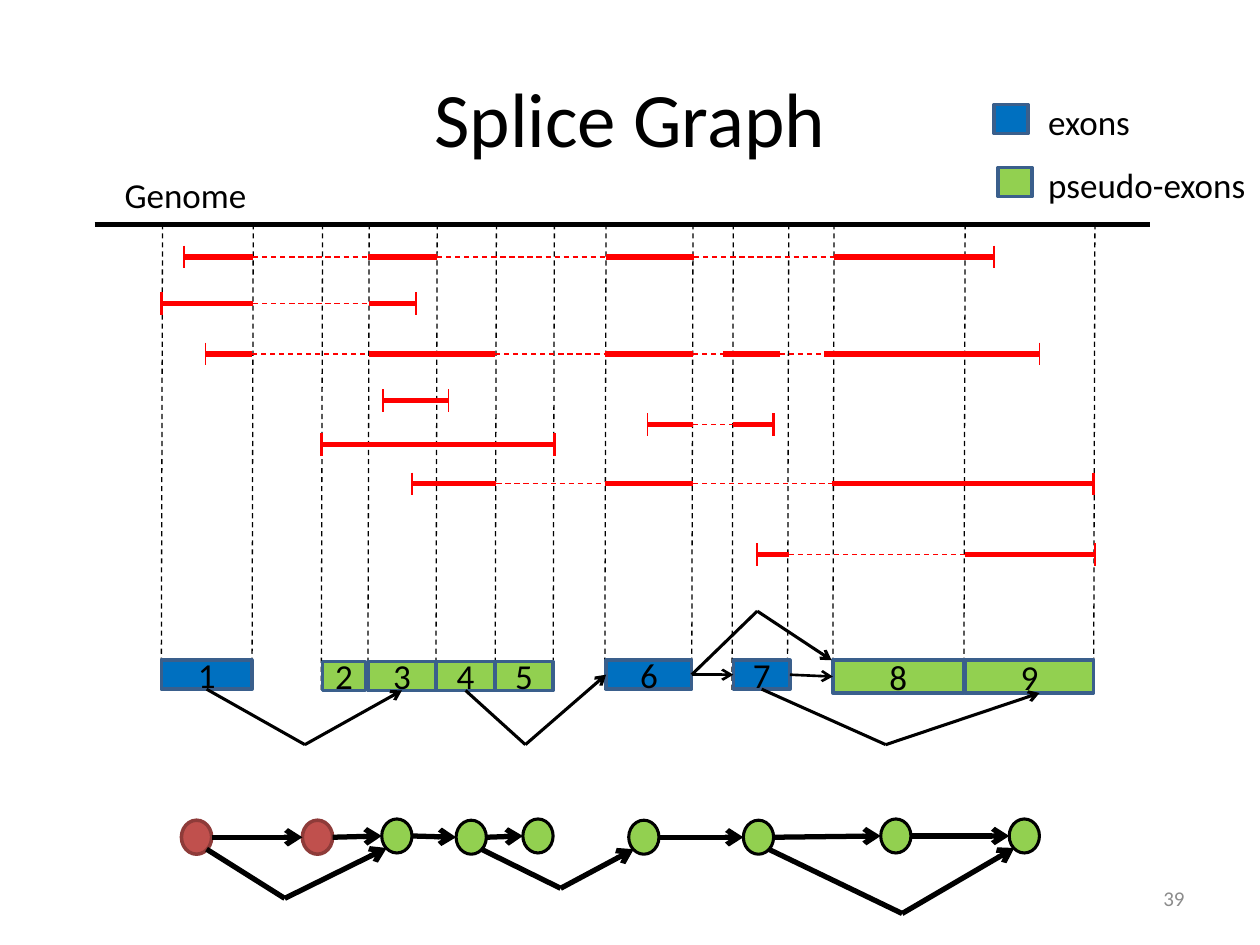
from dataclasses import dataclass
from itertools import pairwise

from lxml import etree
from pptx import Presentation
from pptx.dml.color import RGBColor
from pptx.enum.dml import MSO_LINE
from pptx.enum.shapes import MSO_CONNECTOR, MSO_SHAPE
from pptx.enum.text import MSO_ANCHOR, PP_ALIGN
from pptx.oxml.ns import qn
from pptx.util import Inches, Pt

STRAIGHT = MSO_CONNECTOR.STRAIGHT
RECTANGLE, OVAL = MSO_SHAPE.RECTANGLE, MSO_SHAPE.OVAL
DASH = MSO_LINE.DASH
LEFT, CENTER, RIGHT = PP_ALIGN.LEFT, PP_ALIGN.CENTER, PP_ALIGN.RIGHT
TOP, MIDDLE = MSO_ANCHOR.TOP, MSO_ANCHOR.MIDDLE
SIDE_LEFT, SIDE_BOTTOM, SIDE_RIGHT = 1, 2, 3


@dataclass(frozen=True)
class Theme:
    font: str = "Calibri"
    ink: str = "000000"
    muted: str = "8C8C8C"
    exon: str = "0070C0"
    pseudo: str = "92D050"
    border: str = "3A5F8C"
    read: str = "FF0000"
    start: str = "C0504D"
    start_border: str = "8E3B39"
    title_size: float = 44
    body_size: float = 20
    number_size: float = 12


@dataclass(frozen=True)
class Box:
    left: float
    top: float
    width: float
    height: float

    def point(self, x, y):
        return Inches(self.left + x), Inches(self.top + y)

    def inner(self, x, y, width, height):
        return Box(self.left + x, self.top + y, width, height)

    def frame(self):
        return *self.point(0, 0), Inches(self.width), Inches(self.height)


THEME = Theme()


def write(frame, *lines, size=THEME.body_size, color=THEME.ink, align=LEFT,
          anchor=TOP, spacing=None, wrap=False):
    frame.word_wrap = wrap
    frame.vertical_anchor = anchor
    for index, line in enumerate(lines):
        para = frame.add_paragraph() if index else frame.paragraphs[0]
        para.alignment = align
        para.line_spacing = spacing
        span = para.add_run()
        span.text = line
        span.font.name = THEME.font
        span.font.size = Pt(size)
        span.font.color.rgb = RGBColor.from_string(color)


def add_text(page, box, *lines, **style):
    write(page.shapes.add_textbox(*box.frame()).text_frame, *lines, **style)


def add_filled(page, kind, box, fill, border=THEME.border, weight=2):
    shape = page.shapes.add_shape(kind, *box.frame())
    shape.shadow.inherit = False
    shape.fill.solid()
    shape.fill.fore_color.rgb = RGBColor.from_string(fill)
    shape.line.color.rgb = RGBColor.from_string(border)
    shape.line.width = Pt(weight)
    return shape


def add_line(page, box, start, end, color=THEME.ink, weight=1.75, dash=None, arrow=False):
    joined_start, joined_end = not isinstance(start[0], (int, float)), not isinstance(end[0], (int, float))
    first = box.point(0, 0) if joined_start else box.point(*start)
    last = box.point(0, 0) if joined_end else box.point(*end)
    connector = page.shapes.add_connector(STRAIGHT, *first, *last)
    if joined_start:
        connector.begin_connect(*start)
    if joined_end:
        connector.end_connect(*end)
    connector.line.color.rgb = RGBColor.from_string(color)
    connector.line.width = Pt(weight)
    if dash:
        connector.line.dash_style = dash
    if arrow:
        etree.SubElement(connector.line._get_or_add_ln(), qn("a:tailEnd"), type="arrow")
    etree.SubElement(connector._element.spPr, qn("a:effectLst"))


def add_bend(page, box, start, bend, end, weight=1.75):
    add_line(page, box, start, bend, weight=weight)
    add_line(page, box, bend, end, weight=weight, arrow=True)


def add_title(page, box):
    title = page.shapes.title
    title.left, title.top, title.width, title.height = box.frame()
    write(title.text_frame, "Splice Graph", size=THEME.title_size,
          align=CENTER, anchor=MIDDLE, wrap=True)


def add_legend(page, box):
    add_filled(page, RECTANGLE, box.inner(0, 0.25, 0.27, 0.23), THEME.exon)
    add_filled(page, RECTANGLE, box.inner(0.03, 0.75, 0.27, 0.23), THEME.pseudo)
    add_text(page, box.inner(0.33, 0, box.width - 0.33, box.height),
             "exons", "pseudo-exons", spacing=1.5)


def add_genome(page, box):
    boundaries = (0.54, 1.26, 1.81, 2.18, 2.72, 3.19, 3.65,
                  4.06, 4.75, 5.07, 5.51, 5.87, 6.91, 7.94)
    for x in boundaries:
        add_line(page, box, (x, 0), (x - 0.01, box.height), weight=0.75, dash=DASH)
    add_line(page, box, (0, 0), (box.width, 0), weight=3)
    add_text(page, box.inner(0.14, -0.45, 1.18, 0.44), "Genome")


def add_reads(page, box):
    reads = (
        (0.26, (1, 1), ((0.71, 1.26), (2.17, 2.72), (4.06, 4.76), (5.87, 7.14))),
        (0.63, (1.5, 1), ((0.53, 1.26), (2.18, 2.55))),
        (1.03, (1, 1), ((0.88, 1.25), (2.18, 3.18), (4.05, 4.75), (4.99, 5.44), (5.79, 7.5))),
        (1.4, (1, 1), ((2.29, 2.81),)),
        (1.59, (1, 1.5), ((4.39, 4.75), (5.07, 5.39))),
        (1.75, (1.5, 1.5), ((1.8, 3.65),)),
        (2.06, (1, 1.5), ((2.52, 3.19), (4.05, 4.75), (5.85, 7.93))),
        (2.62, (1, 1.5), ((5.26, 5.51), (6.91, 7.94))),
    )
    for y, tick_weights, segments in reads:
        for (_, gap_start), (gap_end, _) in pairwise(segments):
            add_line(page, box, (gap_start, y), (gap_end, y), THEME.read, 0.75, DASH)
        for start, end in segments:
            add_line(page, box, (start, y), (end, y), THEME.read, 3)
        for x, weight in zip((segments[0][0], segments[-1][1]), tick_weights):
            add_line(page, box, (x, y - 0.09), (x, y + 0.09), THEME.read, weight)


def add_exons(page, box):
    blocks = (
        (0, 0, 0.72, 0.23, THEME.exon),
        (1.28, 0.01, 0.34, 0.23, THEME.pseudo),
        (1.64, 0.01, 0.54, 0.23, THEME.pseudo),
        (2.18, 0.01, 0.47, 0.23, THEME.pseudo),
        (2.65, 0.01, 0.46, 0.23, THEME.pseudo),
        (3.53, 0, 0.68, 0.23, THEME.exon),
        (4.54, 0, 0.45, 0.23, THEME.exon),
        (5.33, 0, 1.04, 0.26, THEME.pseudo),
        (6.38, 0, 1.02, 0.26, THEME.pseudo),
    )
    exons = {}
    for number, (x, y, width, height, fill) in enumerate(blocks, 1):
        exon = add_filled(page, RECTANGLE, box.inner(x, y, width, height), fill)
        frame = exon.text_frame
        frame.margin_left = frame.margin_right = 0
        write(frame, str(number), align=CENTER, anchor=MIDDLE)
        exons[number] = exon

    add_bend(page, box, (exons[1], SIDE_BOTTOM), (1.14, 0.67), (exons[3], SIDE_BOTTOM))
    add_bend(page, box, (exons[4], SIDE_BOTTOM), (2.89, 0.67), (exons[6], SIDE_LEFT))
    add_bend(page, box, (exons[7], SIDE_BOTTOM), (5.75, 0.67), (6.97, 0.26))
    add_bend(page, box, (exons[6], SIDE_RIGHT), (4.73, -0.39), (5.32, 0))
    for before, after in pairwise((6, 7, 8)):
        add_line(page, box, (exons[before], SIDE_RIGHT), (exons[after], SIDE_LEFT),
                 weight=1.5, arrow=True)


def add_splice_graph(page, box):
    width, height = 0.24, 0.27
    nodes = ((0, 0.01), (0.96, 0.01), (1.59, 0), (2.18, 0.01), (2.71, 0),
             (3.55, 0.01), (4.46, 0.01), (5.55, 0), (6.57, 0))
    start_count, chain_end = 2, 4
    for index, (x, y) in enumerate(nodes):
        style = ((THEME.start, THEME.start_border, 2) if index < start_count
                 else (THEME.pseudo, THEME.ink, 1.75))
        add_filled(page, OVAL, box.inner(x, y, width, height), *style)
    for index, ((x, y), (next_x, next_y)) in enumerate(pairwise(nodes)):
        if index != chain_end:
            add_line(page, box, (x + width, y + height / 2), (next_x, next_y + height / 2),
                     weight=3, arrow=True)
    for before, bend, after in ((0, (0.82, 0.63), 2), (3, (3.01, 0.55), 5), (6, (5.72, 0.75), 8)):
        (x, y), (next_x, next_y) = nodes[before], nodes[after]
        add_bend(page, box, (x + 0.2, y + 0.23), bend, (next_x + 0.04, next_y + 0.23), weight=3)


def main():
    deck = Presentation()
    deck.slide_width, deck.slide_height = Inches(10), Inches(7.5)
    page = deck.slides.add_slide(deck.slide_layouts[5])
    add_title(page, Box(0.5, 0.3, 9, 1.25))
    add_splice_graph(page, Box(1.44, 6.5, 6.81, 0.75))
    genome = Box(0.75, 1.78, 8.38, 3.7)
    add_genome(page, genome)
    add_reads(page, genome)
    add_exons(page, Box(1.28, 5.24, 7.4, 0.67))
    add_legend(page, Box(7.89, 0.58, 2.11, 1.06))
    add_text(page, Box(7.17, 6.93, 2.33, 0.4), "39", size=THEME.number_size,
             color=THEME.muted, align=RIGHT, anchor=MIDDLE, wrap=True)
    deck.save("out.pptx")


if __name__ == "__main__":
    main()
